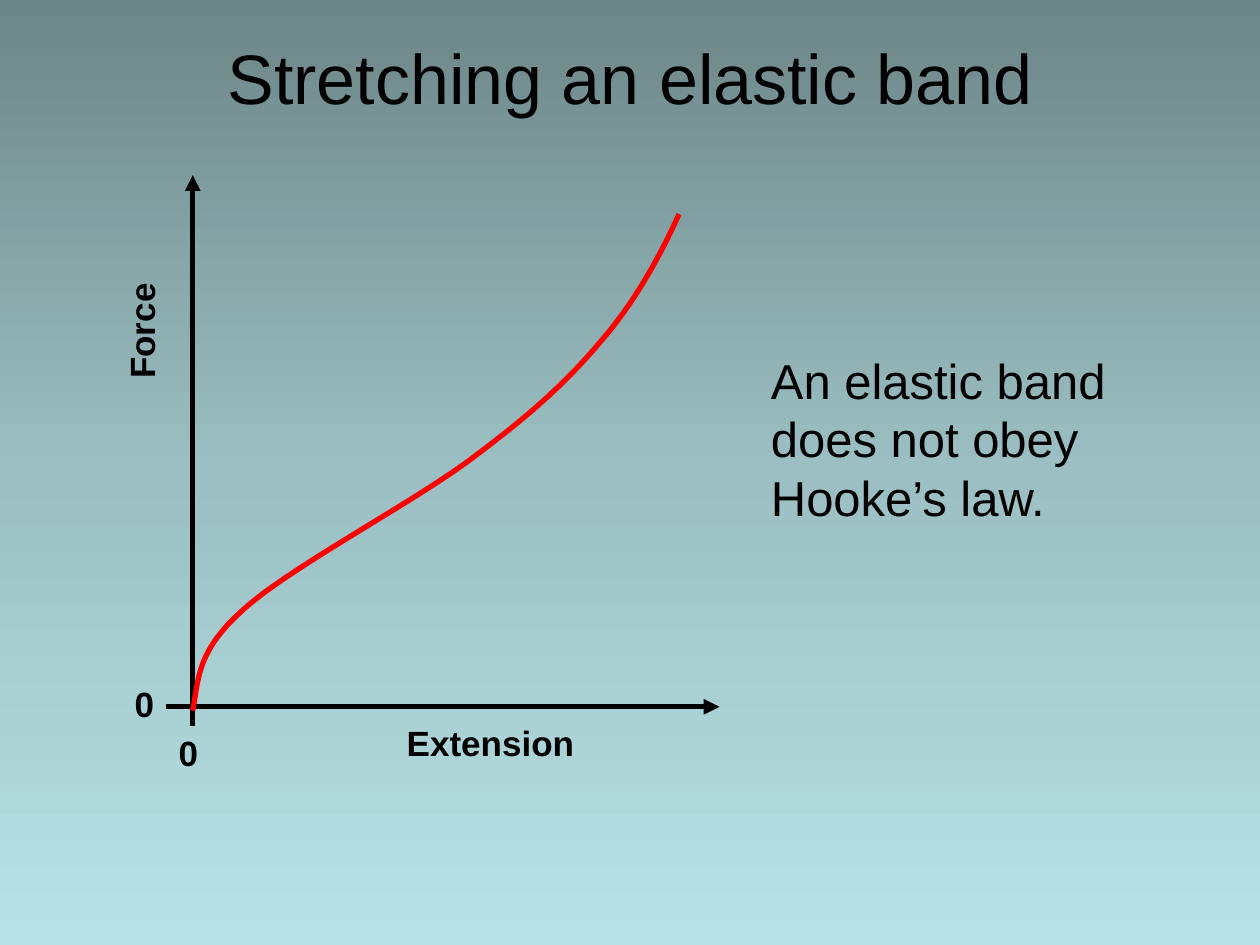
from dataclasses import dataclass

from lxml import etree
from pptx import Presentation
from pptx.dml.color import RGBColor
from pptx.enum.shapes import MSO_CONNECTOR
from pptx.enum.text import MSO_ANCHOR, MSO_AUTO_SIZE, PP_ALIGN
from pptx.oxml.ns import qn
from pptx.util import Inches, Pt

STRAIGHT = MSO_CONNECTOR.STRAIGHT
MIDDLE, TOP = MSO_ANCHOR.MIDDLE, MSO_ANCHOR.TOP
LEFT, CENTER = PP_ALIGN.LEFT, PP_ALIGN.CENTER
FIT_SHAPE, NO_FIT = MSO_AUTO_SIZE.SHAPE_TO_FIT_TEXT, MSO_AUTO_SIZE.NONE

COLORS = {"ink": "000000", "curve": "FF0000",
          "sky_top": "6D8688", "sky_mid": "9BBFC2", "sky_low": "B8E3E6"}
FONT = "Arial"
COLS, ROWS = 100, 75  # grid over the whole slide
LINE_W = Pt(3)
STEPS = 24  # points sampled on each curve segment

prs = Presentation()
prs.slide_width, prs.slide_height = Inches(10), Inches(7.5)


@dataclass
class Label:
    text: str
    col: float
    row: float
    cols: float
    rows: float = 4.3
    size: int = 20
    bold: bool = True
    rotation: int = 0


@dataclass
class Axis:
    start: tuple[float, float]
    end: tuple[float, float]


def x(col: float) -> int:
    return round(prs.slide_width * col / COLS)


def y(row: float) -> int:
    return round(prs.slide_height * row / ROWS)


def place(sp, col: float, row: float, cols: float, rows: float) -> None:
    sp.left, sp.top, sp.width, sp.height = x(col), y(row), x(cols), y(rows)


def write(sp, text: str, *, size: int, bold: bool = False, align=LEFT,
          anchor=TOP, fit=FIT_SHAPE) -> None:
    tf = sp.text_frame
    tf.word_wrap = True
    tf.auto_size = fit
    tf.vertical_anchor = anchor
    p = tf.paragraphs[0]
    p.alignment = align
    r = p.add_run()
    r.text = text
    r.font.name, r.font.size, r.font.bold = FONT, Pt(size), bold
    r.font.color.rgb = RGBColor.from_string(COLORS["ink"])


def style_line(sp, color: str) -> None:
    sp.line.width = LINE_W
    sp.line.color.rgb = RGBColor.from_string(COLORS[color])


def add_label(shapes, label: Label) -> None:
    sp = shapes.add_textbox(0, 0, 0, 0)
    place(sp, label.col, label.row, label.cols, label.rows)
    sp.rotation = label.rotation
    write(sp, label.text, size=label.size, bold=label.bold)


def add_axis(shapes, axis: Axis) -> None:
    (c1, r1), (c2, r2) = axis.start, axis.end
    sp = shapes.add_connector(STRAIGHT, x(c1), y(r1), x(c2), y(r2))
    style_line(sp, "ink")
    etree.SubElement(sp.line._get_or_add_ln(), qn("a:tailEnd"), type="triangle")
    etree.SubElement(sp._element.spPr, qn("a:effectLst"))


def bezier(nodes: list[tuple[float, float]]) -> list[tuple[int, int]]:
    """Sample cubic segments that share their end nodes."""
    points = []
    for i in range(0, len(nodes) - 1, 3):
        for step in range(1, STEPS + 1):
            t = step / STEPS
            weights = ((1 - t) ** 3, 3 * t * (1 - t) ** 2, 3 * t * t * (1 - t), t ** 3)
            col, row = (sum(w * n[k] for w, n in zip(weights, nodes[i:i + 4]))
                        for k in (0, 1))
            points.append((x(col), y(row)))
    return points


def add_curve(shapes, nodes: list[tuple[float, float]]) -> None:
    builder = shapes.build_freeform(x(nodes[0][0]), y(nodes[0][1]))
    builder.add_line_segments(bezier(nodes), close=False)
    sp = builder.convert_to_shape()
    sp.shadow.inherit = False
    sp.fill.background()
    style_line(sp, "curve")


def paint_background(slide, names: list[str]) -> None:
    fill = slide.background.fill
    fill.gradient()
    fill.gradient_angle = 270
    stops = slide._element.find(".//" + qn("a:gsLst"))
    for stop in list(stops):
        stops.remove(stop)
    for i, name in enumerate(names):
        stop = etree.SubElement(stops, qn("a:gs"), pos=str(100000 * i // (len(names) - 1)))
        etree.SubElement(stop, qn("a:srgbClr"), val=COLORS[name])


ORIGIN = (15.3, 56.1)
AXES = [
    Axis((ORIGIN[0], 57.6), (ORIGIN[0], 13.9)),
    Axis((13.2, ORIGIN[1]), (57.1, ORIGIN[1])),
]
AXIS_LABELS = [
    Label("0", 13.2, 57.6, 4.9),
    Label("Force", 3.4, 21.1, 15.6, rotation=270),
    Label("0", 9.7, 53.7, 4.9),
    Label("Extension", 31.3, 56.8, 21.6),
]
CURVE = [
    (15.3, 56.4),
    (15.8, 53.8), (15.6, 51.7), (19.3, 48.4),
    (22.9, 45.1), (32.6, 40), (37.3, 36.5),
    (42, 33), (44.8, 30.5), (47.6, 27.2),
    (50.4, 24), (52.4, 20.3), (53.9, 17),
]
REMARK = Label("An elastic band does not obey Hooke’s law.",
               60.2, 27.3, 33.1, 15, size=28, bold=False)

# Background and title
slide = prs.slides.add_slide(prs.slide_layouts[5])
paint_background(slide, ["sky_top", "sky_mid", "sky_low"])
title = slide.shapes.title
place(title, 5, 3, 90, 6.1)
write(title, "Stretching an elastic band", size=40, align=CENTER, anchor=MIDDLE, fit=NO_FIT)

# Axes with their labels
graph = slide.shapes.add_group_shape()
for axis in AXES:
    add_axis(graph.shapes, axis)
for label in AXIS_LABELS:
    add_label(graph.shapes, label)

# Force curve and remark
add_curve(slide.shapes, CURVE)
add_label(slide.shapes, REMARK)

prs.save("out.pptx")
